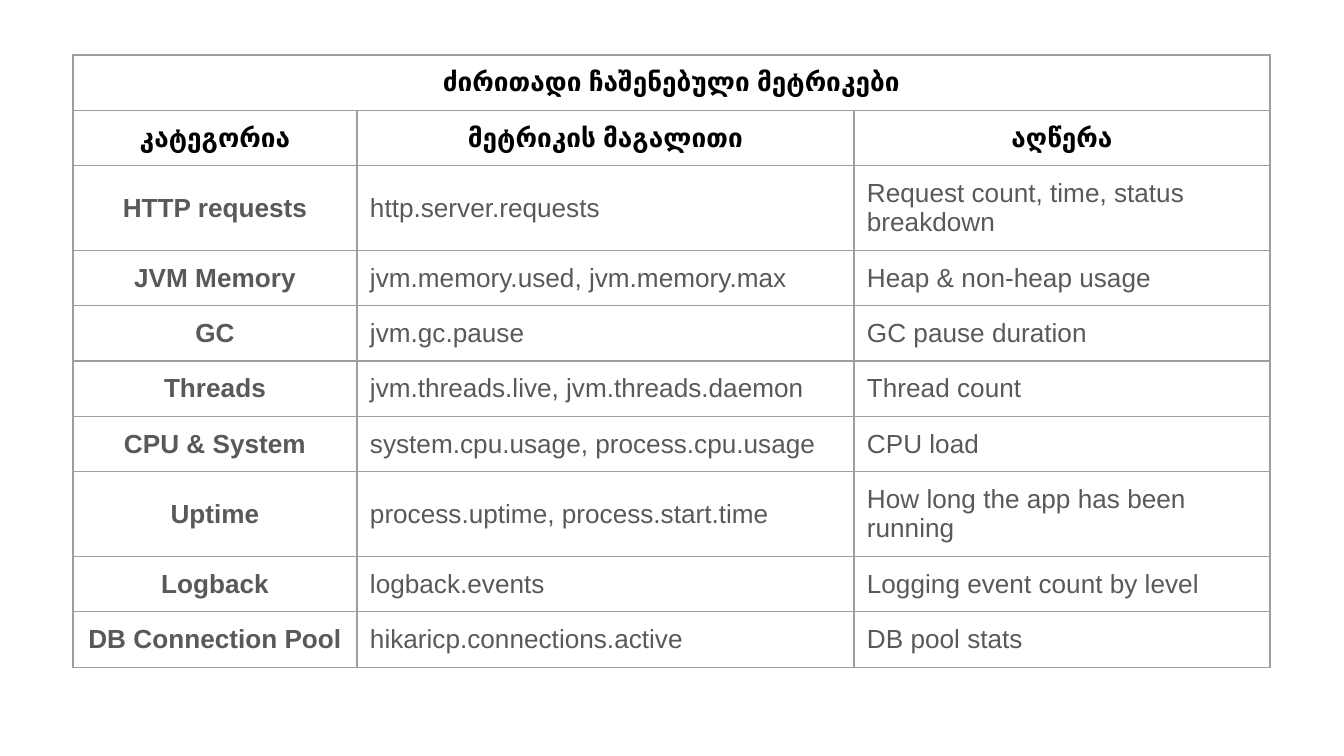
"""Build a slide with a table of the main built-in metrics."""
from lxml import etree
from pptx import Presentation
from pptx.dml.color import RGBColor
from pptx.enum.text import MSO_ANCHOR, PP_ALIGN
from pptx.oxml.ns import qn
from pptx.util import Pt

PX = 9144000 / 1344
MIDDLE = MSO_ANCHOR.MIDDLE
CENTER, LEFT = PP_ALIGN.CENTER, PP_ALIGN.LEFT
BLACK = RGBColor(0x00, 0x00, 0x00)
GRAY = RGBColor(0x59, 0x59, 0x59)
BORDER = RGBColor(0x9E, 0x9E, 0x9E)

TITLE = "ძირითადი ჩაშენებული მეტრიკები"
ROWS = [
    (TITLE, "", ""),
    ("კატეგორია", "მეტრიკის მაგალითი", "აღწერა"),
    ("HTTP requests", "http.server.requests", "Request count, time, status breakdown"),
    ("JVM Memory", "jvm.memory.used, jvm.memory.max", "Heap & non-heap usage"),
    ("GC", "jvm.gc.pause", "GC pause duration"),
    ("Threads", "jvm.threads.live, jvm.threads.daemon", "Thread count"),
    ("CPU & System", "system.cpu.usage, process.cpu.usage", "CPU load"),
    ("Uptime", "process.uptime, process.start.time", "How long the app has been running"),
    ("Logback", "logback.events", "Logging event count by level"),
    ("DB Connection Pool", "hikaricp.connections.active", "DB pool stats"),
]
HEADER_ROWS = 2
COLUMN_WIDTHS = [284, 497, 416]
ROW_HEIGHT, TALL_ROW_HEIGHT = 44, 67
TALL_ROWS = {2, 7}
ROW_HEIGHTS = [TALL_ROW_HEIGHT if index in TALL_ROWS else ROW_HEIGHT for index in range(len(ROWS))]
CELL_MARGIN = 13


def px(length):
    return round(length * PX)


def add_borders(cell):
    properties = cell._tc.get_or_add_tcPr()
    for position, side in enumerate(("lnL", "lnR", "lnT", "lnB")):
        line = etree.Element(qn(f"a:{side}"), w=str(Pt(0.75)))
        fill = etree.SubElement(line, qn("a:solidFill"))
        etree.SubElement(fill, qn("a:srgbClr"), val=str(BORDER))
        properties.insert(position, line)


presentation = Presentation()
presentation.slide_width = px(1344)
presentation.slide_height = px(756)
slide = presentation.slides.add_slide(presentation.slide_layouts[6])

table = slide.shapes.add_table(
    len(ROWS), len(COLUMN_WIDTHS), px(73), px(55), px(sum(COLUMN_WIDTHS)), px(sum(ROW_HEIGHTS))
).table
table.first_row = False
table.horz_banding = False
for column, width in zip(table.columns, COLUMN_WIDTHS):
    column.width = px(width)
for row, height in zip(table.rows, ROW_HEIGHTS):
    row.height = px(height)
table.cell(0, 0).merge(table.cell(0, len(COLUMN_WIDTHS) - 1))

for row_index, texts in enumerate(ROWS):
    for column_index, text in enumerate(texts):
        cell = table.cell(row_index, column_index)
        cell.fill.background()
        add_borders(cell)
        if cell.is_spanned:
            continue
        is_header = row_index < HEADER_ROWS
        is_label = is_header or column_index == 0
        cell.margin_left = cell.margin_right = px(CELL_MARGIN)
        cell.margin_top = cell.margin_bottom = px(CELL_MARGIN)
        cell.vertical_anchor = MIDDLE
        cell.text_frame.text = text
        paragraph = cell.text_frame.paragraphs[0]
        paragraph.alignment = CENTER if is_label else LEFT
        font = paragraph.runs[0].font
        font.name = "Arial"
        font.size = Pt(14)
        font.bold = is_label
        font.color.rgb = BLACK if is_header else GRAY

presentation.save("out.pptx")
